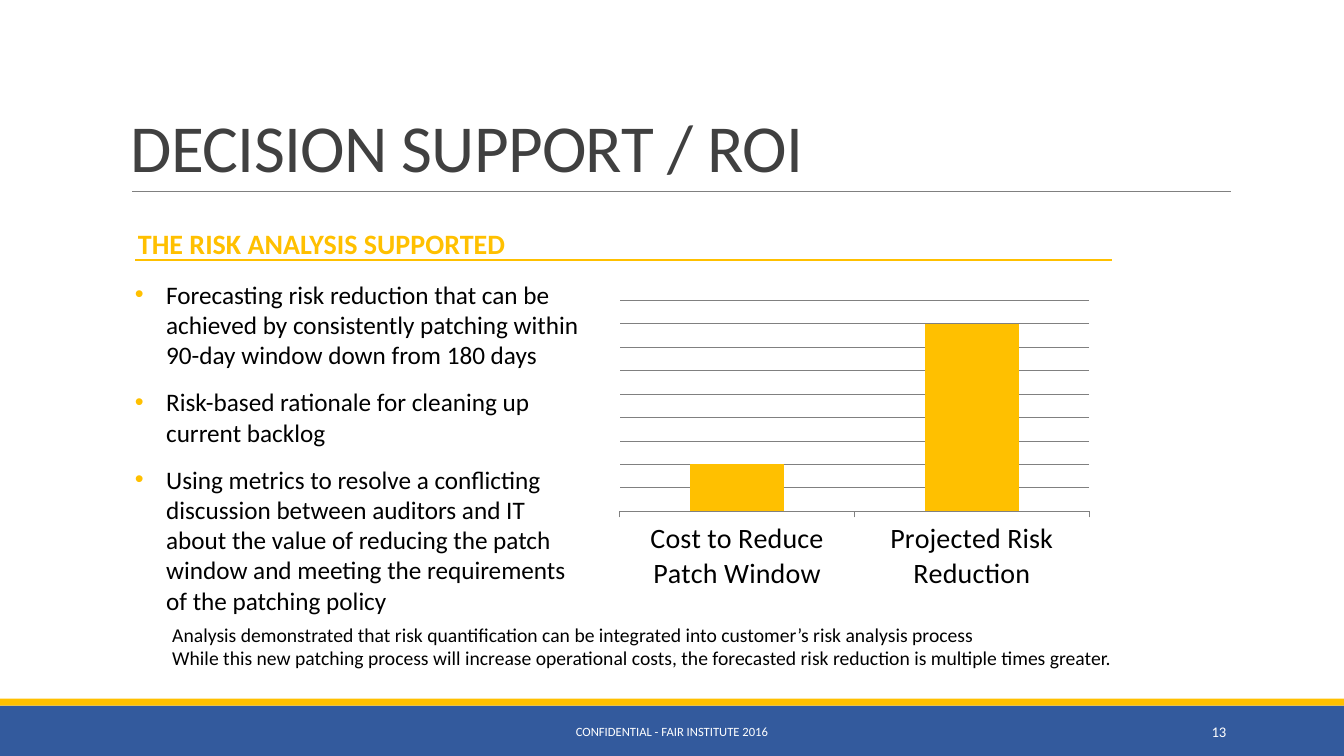
import pptx
import pptx.chart.data
import pptx.dml.color
import pptx.enum.chart
import pptx.enum.shapes
import pptx.enum.text
import pptx.oxml
import pptx.oxml.ns
import pptx.util
from lxml import etree

RGBColor = pptx.dml.color.RGBColor
BLUE = RGBColor(0x33, 0x5A, 0x9D)
GOLD = RGBColor(0xFF, 0xC0, 0x00)
GRAY = RGBColor(0x80, 0x80, 0x80)
CHARCOAL = RGBColor(0x40, 0x40, 0x40)
BLACK = RGBColor(0x00, 0x00, 0x00)
WHITE = RGBColor(0xFF, 0xFF, 0xFF)

ALIGN = pptx.enum.text.PP_ALIGN
ANCHOR = pptx.enum.text.MSO_ANCHOR


def add_child(parent, tag, **attributes):
    child = etree.SubElement(parent, pptx.oxml.ns.qn(tag))
    for name, value in attributes.items():
        child.set(name, value)
    return child


def write_paragraph(paragraph, text, size=18, color=BLACK, font="Calibri", bold=False,
                    align=ALIGN.LEFT, line_spacing=1.0, before=0, after=0,
                    indent=0, bullet=None, tracking=None):
    paragraph.alignment = align
    paragraph.line_spacing = line_spacing
    paragraph.space_before = pptx.util.Pt(before)
    paragraph.space_after = pptx.util.Pt(after)
    properties = paragraph._p.get_or_add_pPr()
    margin = pptx.util.Inches(indent)
    properties.set("marL", str(margin))
    properties.set("indent", str(-margin if bullet else 0))
    if bullet:
        add_child(add_child(properties, "a:buClr"), "a:srgbClr", val=str(GOLD))
        add_child(properties, "a:buFont", typeface="Arial")
        add_child(properties, "a:buChar", char=bullet)
    run = paragraph.add_run()
    run.text = text
    run.font.name = font
    run.font.size = pptx.util.Pt(size)
    run.font.bold = bold
    run.font.color.rgb = color
    if tracking is not None:
        run._r.get_or_add_rPr().set("spc", str(round(tracking * 100)))


class SlideBuilder:
    """Holds the style and current slide; lengths are percentages of the slide's size."""

    def __init__(self, presentation, font="Calibri"):
        self.width = presentation.slide_width
        self.height = presentation.slide_height
        self.font = font
        self.slide = presentation.slides.add_slide(presentation.slide_layouts[6])

    def place(self, left, top, width, height):
        return (round(self.width * left / 100), round(self.height * top / 100),
                round(self.width * width / 100), round(self.height * height / 100))

    def band(self, top, height, color):
        shape = self.slide.shapes.add_shape(
            pptx.enum.shapes.MSO_SHAPE.RECTANGLE, *self.place(0, top, 100, height))
        shape.shadow.inherit = False
        shape.fill.solid()
        shape.fill.fore_color.rgb = color
        shape.line.fill.background()

    def rule(self, left, right, top, color, weight):
        connector = self.slide.shapes.add_connector(
            pptx.enum.shapes.MSO_CONNECTOR.STRAIGHT, *self.place(left, top, right, top))
        connector.line.color.rgb = color
        connector.line.width = pptx.util.Pt(weight)
        add_child(connector._element.spPr, "a:effectLst")

    def text(self, box, *lines, anchor=ANCHOR.TOP, gap=0, **style):
        shape = self.slide.shapes.add_textbox(*self.place(*box))
        frame = shape.text_frame
        frame.word_wrap = True
        frame.vertical_anchor = anchor
        for number, line in enumerate(lines):
            paragraph = frame.add_paragraph() if number else frame.paragraphs[0]
            write_paragraph(paragraph, line, font=self.font,
                            before=gap if number else 0, **style)

    def column_chart(self, box, categories, values, top_value, step):
        data = pptx.chart.data.CategoryChartData()
        data.categories = categories
        data.add_series("Series 1", values)
        chart = self.slide.shapes.add_chart(
            pptx.enum.chart.XL_CHART_TYPE.COLUMN_STACKED, *self.place(*box), data).chart
        chart.has_legend = False
        chart.has_title = False
        chart.font.name = self.font
        chart.font.size = pptx.util.Pt(18)
        chart.font.color.rgb = BLACK
        plot = chart.plots[0]
        plot.gap_width = 150
        plot.overlap = 100
        plot.vary_by_categories = False
        fill = plot.series[0].format.fill
        fill.solid()
        fill.fore_color.rgb = GOLD
        value_axis = chart.value_axis
        value_axis.minimum_scale = 0
        value_axis.maximum_scale = top_value
        value_axis.major_unit = step
        value_axis.has_major_gridlines = True
        value_axis.major_gridlines.format.line.color.rgb = GRAY
        value_axis.visible = False
        category_axis = chart.category_axis
        category_axis.major_tick_mark = pptx.enum.chart.XL_TICK_MARK.OUTSIDE
        category_axis.format.line.color.rgb = GRAY
        category_axis.tick_labels.font.size = pptx.util.Pt(20)
        category_axis.tick_labels.font.name = self.font
        category_axis.tick_labels.font.color.rgb = BLACK


def main():
    presentation = pptx.Presentation()
    presentation.slide_width = pptx.util.Inches(13.33)
    presentation.slide_height = pptx.util.Inches(7.5)
    builder = SlideBuilder(presentation)

    builder.band(93.33, 6.67, BLUE)
    builder.band(92.4, 0.93, GOLD)
    builder.rule(9.83, 91.6, 25.33, GRAY, 0.5)
    builder.text((9, 4.13, 82.52, 21.2), "DECISION SUPPORT / ROI", anchor=ANCHOR.BOTTOM,
                 size=48, color=CHARCOAL, line_spacing=0.85, tracking=-0.5)
    builder.text((30.23, 94.13, 39.53, 5.33), "CONFIDENTIAL - FAIR INSTITUTE 2016",
                 anchor=ANCHOR.MIDDLE, size=9, color=WHITE, align=ALIGN.CENTER)
    builder.text((81.25, 94.13, 10.73, 5.33), "13",
                 anchor=ANCHOR.MIDDLE, size=10.5, color=WHITE, align=ALIGN.RIGHT)

    builder.text(
        (9.3, 36.27, 34.58, 26.13),
        "Forecasting risk reduction that can be achieved by consistently patching "
        "within 90-day window down from 180 days",
        "Risk-based rationale for cleaning up current backlog",
        "Using metrics to resolve a conflicting discussion between auditors and IT about "
        "the value of reducing the patch window and meeting the requirements of the "
        "patching policy",
        gap=12, indent=0.31, bullet="•")
    builder.text((6.9, 29.2, 38.48, 5.87), "THE RISK ANALYSIS SUPPORTED",
                 anchor=ANCHOR.BOTTOM, size=20, color=GOLD, bold=True, indent=0.35, after=6)
    builder.rule(10.05, 82.75, 34.4, GOLD, 1)
    builder.text(
        (5.85, 81.73, 82.67, 7.6),
        "Analysis demonstrated that risk quantification can be integrated into "
        "customer’s risk analysis process",
        "While this new patching process will increase operational costs, the forecasted "
        "risk reduction is multiple times greater.",
        size=14, indent=0.83)
    builder.column_chart((45.39, 38.93, 36.38, 40),
                         ["Cost to Reduce Patch Window", "Projected Risk Reduction"],
                         [25, 100], top_value=112.5, step=12.5)
    presentation.save("out.pptx")


if __name__ == "__main__":
    main()
